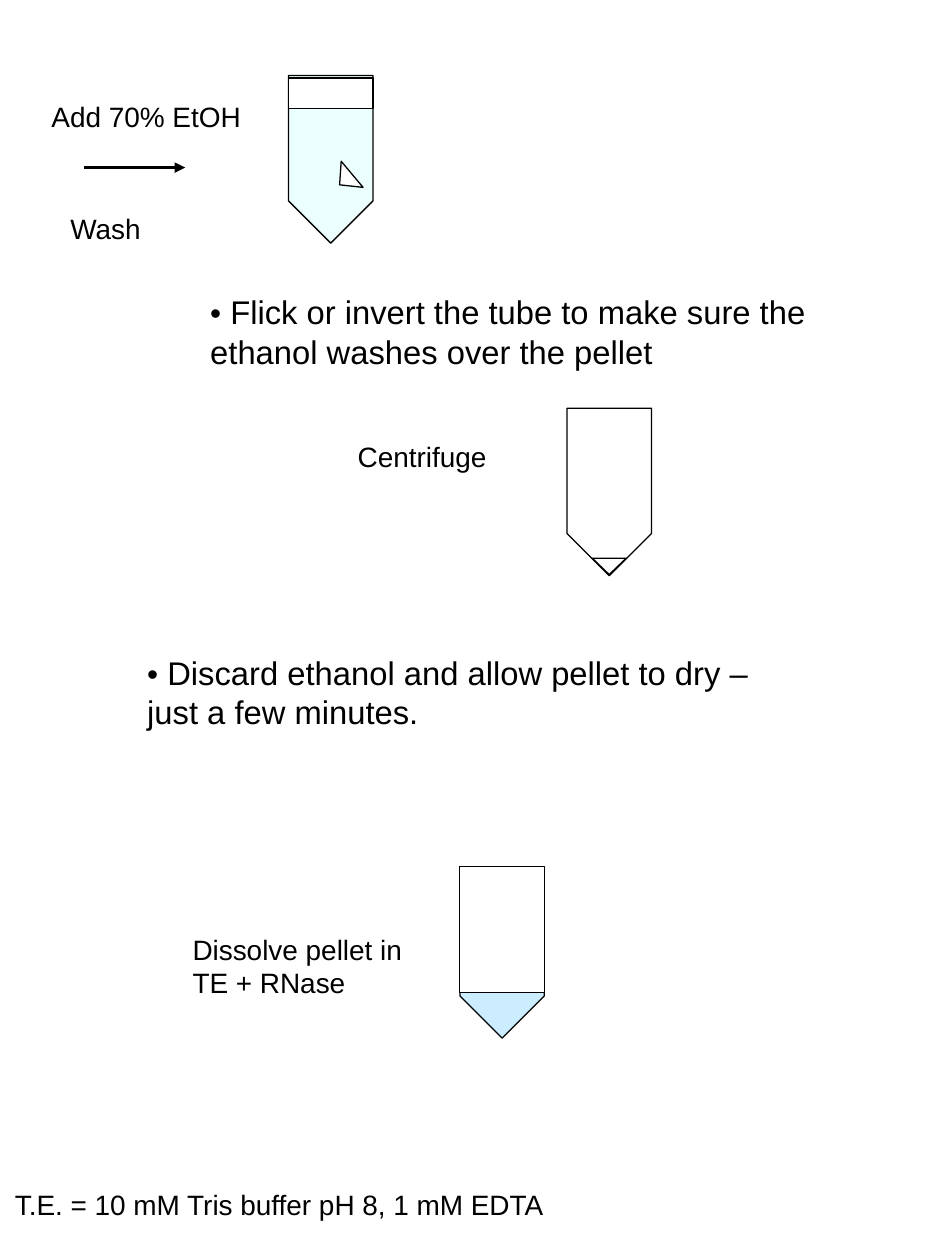
from lxml import etree
from pptx import Presentation
from pptx import util as u
from pptx.dml.color import RGBColor
from pptx.enum import shapes, text
from pptx.oxml.ns import qn

BLACK, WHITE = "000000", "FFFFFF"
TUBE_WIDTH, TUBE_HEIGHT = 0.67, 1.33


def colour(value):
    return RGBColor.from_string(value)


class Diagram:
    """Draws protocol steps on one slide in a shared style."""

    font, label_size, bullet_size, step_size = "Arial", 16, 18, 18.7

    def __init__(self, slide):
        self.slide = slide

    def format_run(self, run, size):
        run.font.name = self.font
        run.font.size = u.Pt(size)
        run.font.color.rgb = colour(BLACK)

    def label(self, words, left, top, width, height=0.37, wrap=True):
        box = self.slide.shapes.add_textbox(*map(u.Inches, (left, top, width, height)))
        frame = box.text_frame
        frame.text = words
        frame.word_wrap = wrap
        frame.auto_size = text.MSO_AUTO_SIZE.SHAPE_TO_FIT_TEXT
        self.format_run(frame.paragraphs[0].runs[0], self.label_size)
        return frame.paragraphs[0]

    def step(self, words, left, top):
        paragraph = self.label("•", left, top, 5.22, 0.73)
        self.format_run(paragraph.runs[0], self.bullet_size)
        run = paragraph.add_run()
        run.text = " " + words
        self.format_run(run, self.step_size)

    def outline(self, group, kind, left, top, width, height, fill=WHITE, rotation=0):
        shape = group.shapes.add_shape(kind, *map(u.Inches, (left, top, width, height)))
        shape.shadow.inherit = False
        shape.rotation = rotation
        if fill:
            shape.fill.solid()
            shape.fill.fore_color.rgb = colour(fill)
        else:
            shape.fill.background()
        shape.line.color.rgb = colour(BLACK)
        shape.line.width = u.Pt(0.75)
        return shape

    def tube(self, left, top, fill=None, opacity=None):
        """Draw a pointed tube by its upright bounds; return its group."""
        group = self.slide.shapes.add_group_shape()
        shift = (TUBE_HEIGHT - TUBE_WIDTH) / 2
        body = self.outline(group, shapes.MSO_SHAPE.PENTAGON, left - shift, top + shift,
                            TUBE_HEIGHT, TUBE_WIDTH, fill, 90)
        if opacity:
            tint = body.element.spPr.find(f"{qn('a:solidFill')}/{qn('a:srgbClr')}")
            etree.SubElement(tint, qn("a:alpha"), val=str(opacity * 1000))
        return group

    def space(self, group, left, top, height):
        self.outline(group, shapes.MSO_SHAPE.RECTANGLE, left, top, TUBE_WIDTH, height)

    def pellet(self, group, left, top, rotation):
        self.outline(group, shapes.MSO_SHAPE.ISOSCELES_TRIANGLE, left, top, 0.27, 0.13,
                     rotation=rotation)

    def arrow(self, left, top, right):
        connector = self.slide.shapes.add_connector(
            shapes.MSO_CONNECTOR.STRAIGHT, *map(u.Inches, (left, top, right, top)))
        connector.line.color.rgb = colour(BLACK)
        connector.line.width = u.Pt(2)
        properties = connector.element.spPr
        etree.SubElement(properties.find(qn("a:ln")), qn("a:tailEnd"), type="triangle")
        etree.SubElement(properties, qn("a:effectLst"))


def main():
    presentation = Presentation()
    presentation.slide_width, presentation.slide_height = u.Inches(7.5), u.Inches(10)
    diagram = Diagram(presentation.slides.add_slide(presentation.slide_layouts[6]))

    diagram.step("Discard ethanol and allow pellet to dry – just a few minutes.", 1.07, 5.13)

    wash_tube = diagram.tube(2.29, 0.6, "CCFFFF", opacity=39)
    diagram.space(wash_tube, 2.29, 0.62, 0.24)
    diagram.pellet(wash_tube, 2.61, 1.36, 230)

    spun_tube = diagram.tube(4.5, 3.24)
    diagram.pellet(spun_tube, 4.7, 4.43, 180)

    diagram.label("Add 70% EtOH", 0.31, 0.74, 1.71)

    dissolved_tube = diagram.tube(3.65, 6.91, "CCECFF")
    diagram.space(dissolved_tube, 3.65, 6.88, 1)

    diagram.label("Dissolve pellet in TE + RNase", 1.43, 7.35, 2.04, 0.64)
    diagram.arrow(0.67, 1.33, 1.47)
    diagram.label("Wash", 0.46, 1.63, 1.69)
    diagram.label("Centrifuge", 2.74, 3.44, 1.69)
    diagram.label("T.E. = 10 mM Tris buffer pH 8, 1 mM EDTA", 0.02, 9.38, 4.46, wrap=False)
    diagram.step("Flick or invert the tube to make sure the ethanol washes over the pellet",
                 1.57, 2.27)

    presentation.save("out.pptx")


if __name__ == "__main__":
    main()
